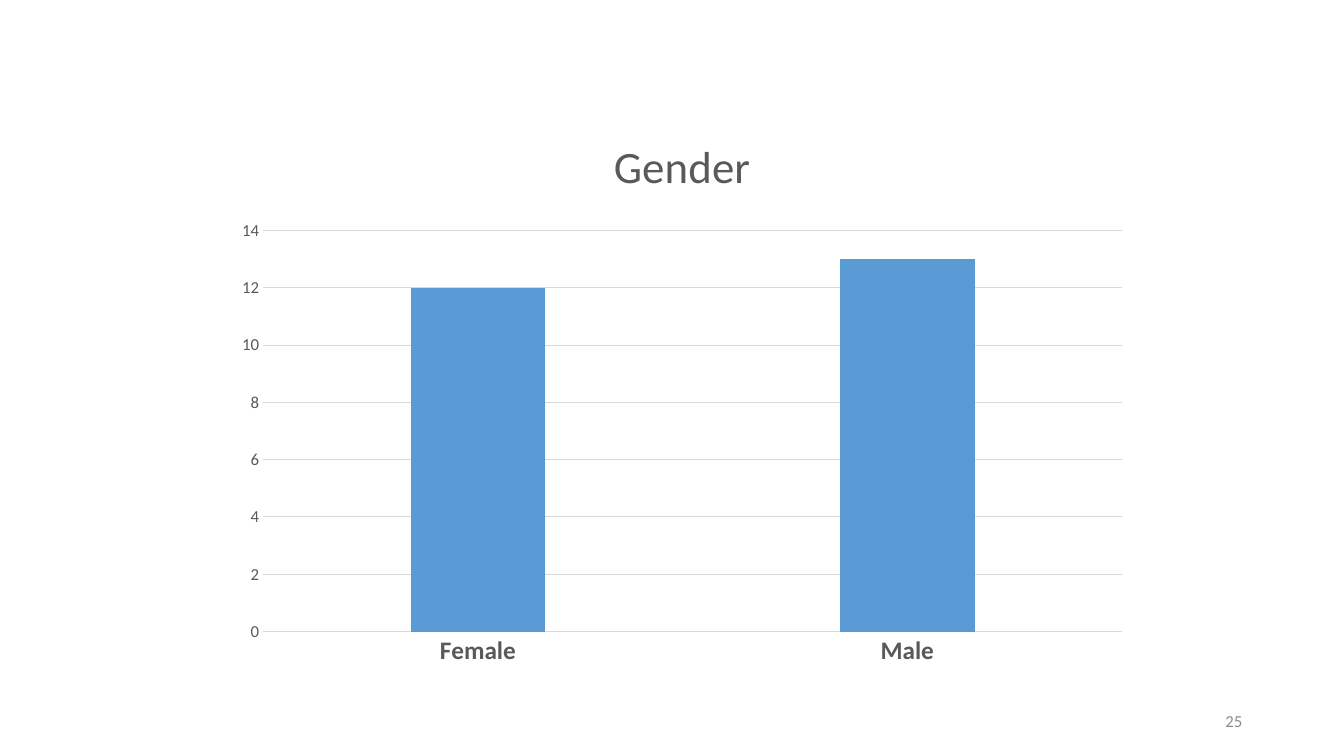
from pptx import Presentation
from pptx.chart.data import CategoryChartData as ChartData
from pptx.dml.color import RGBColor as RGB
from pptx.enum.chart import XL_CHART_TYPE as Kind, XL_TICK_MARK as Tick
from pptx.enum.text import MSO_ANCHOR as Anchor, PP_ALIGN as Align
from pptx.util import Inches, Pt

FONT = "Calibri"
HUES = {"text": "595959", "grid": "D9D9D9", "bar": "5B9BD5", "page": "8C8C8C"}


def style(font, size, hue, bold=False):
    font.name = FONT
    font.size = Pt(size)
    font.bold = bold
    font.color.rgb = RGB.from_string(HUES[hue])


deck = Presentation()
deck.slide_width, deck.slide_height = Inches(13.33), Inches(7.5)
slide = deck.slides.add_slide(deck.slide_layouts[6])

# Gender chart
data = ChartData()
data.categories = ["Female", "Male"]
data.add_series("Series 1", [12, 13])
chart = slide.shapes.add_chart(
    Kind.COLUMN_CLUSTERED, Inches(2.22), Inches(1.09), Inches(9.09), Inches(5.63), data
).chart
chart.has_legend = False
style(chart.font, 10, "text")

# Chart title
chart.has_title = True
title = chart.chart_title.text_frame.paragraphs[0].add_run()
title.text = "Gender"
style(title.font, 32, "text")
chart.chart_title.include_in_layout = False

# Columns
plot = chart.plots[0]
plot.vary_by_categories = False
plot.gap_width, plot.overlap = 219, -27
fill = plot.series[0].format.fill
fill.solid()
fill.fore_color.rgb = RGB.from_string(HUES["bar"])

# Axes and grid
cat, val = chart.category_axis, chart.value_axis
for axis in (cat, val):
    axis.major_tick_mark = axis.minor_tick_mark = Tick.NONE
style(cat.tick_labels.font, 18, "text", bold=True)
style(val.tick_labels.font, 12, "text")
val.minimum_scale, val.maximum_scale, val.major_unit = 0, 14, 2
val.format.line.fill.background()
for line in (cat.format.line, val.major_gridlines.format.line):
    line.color.rgb = RGB.from_string(HUES["grid"])
    line.width = Pt(0.75)

# Page number
box = slide.shapes.add_textbox(Inches(9.42), Inches(6.95), Inches(3), Inches(0.4))
frame = box.text_frame
frame.word_wrap = True
frame.vertical_anchor = Anchor.MIDDLE
para = frame.paragraphs[0]
para.alignment = Align.RIGHT
page = para.add_run()
page.text = "25"
style(page.font, 12, "page")

deck.save("out.pptx")
